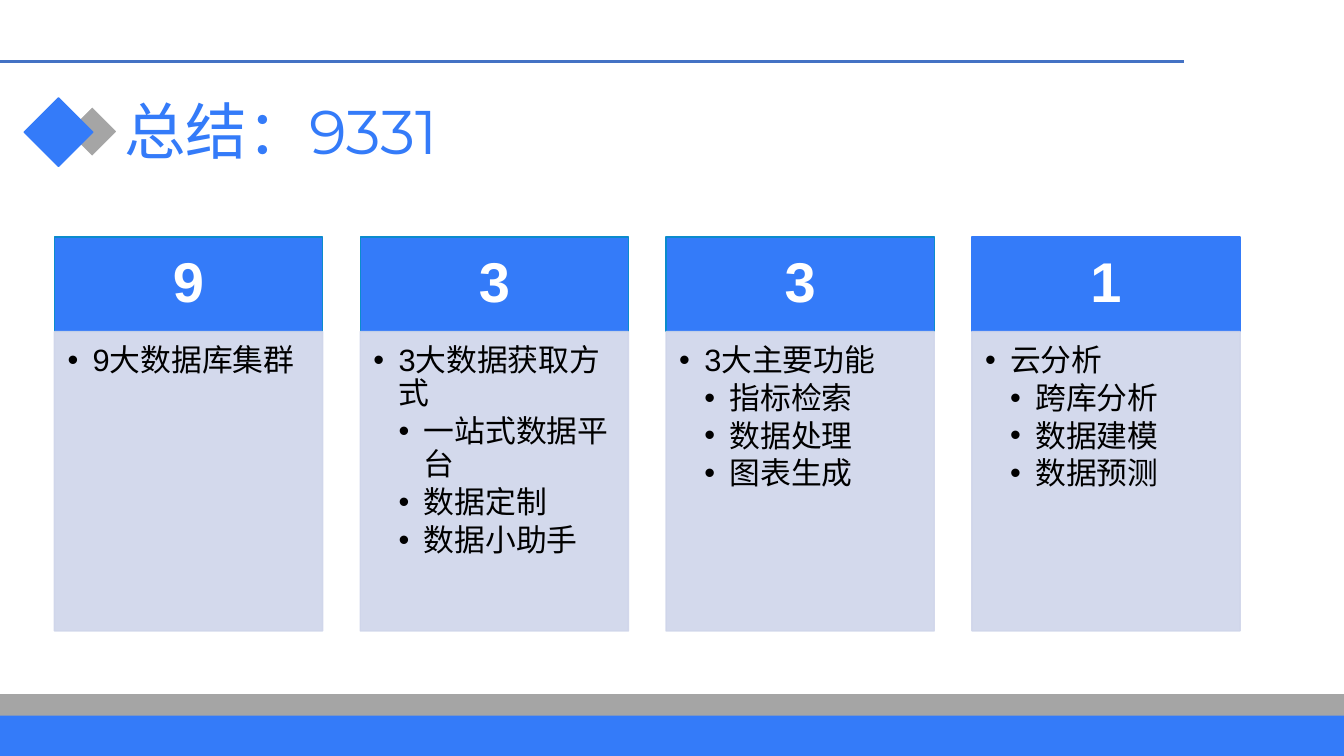
from dataclasses import dataclass

from lxml import etree
from pptx import Presentation
from pptx.dml.color import RGBColor
from pptx.enum.shapes import MSO_CONNECTOR, MSO_SHAPE
from pptx.enum.text import MSO_ANCHOR, MSO_AUTO_SIZE, PP_ALIGN
from pptx.oxml.ns import qn
from pptx.util import Inches, Pt

RECTANGLE, DIAMOND = MSO_SHAPE.RECTANGLE, MSO_SHAPE.DIAMOND
STRAIGHT = MSO_CONNECTOR.STRAIGHT
TOP, MIDDLE = MSO_ANCHOR.TOP, MSO_ANCHOR.MIDDLE
LEFT, CENTER = PP_ALIGN.LEFT, PP_ALIGN.CENTER
NO_AUTOFIT = MSO_AUTO_SIZE.NONE


@dataclass(frozen=True)
class Theme:
    blue: str = "347BF9"
    teal: str = "0B8BCC"
    rule: str = "4472C4"
    gray: str = "A5A5A5"
    panel: str = "CFD5EA"
    panel_opacity: int = 90
    white: str = "FFFFFF"
    black: str = "000000"
    title_font: str = "Montserrat"
    body_font: str = "Arial"
    title_size: int = 44
    number_size: int = 40
    list_size: int = 22
    line_spacing: float = 0.9
    list_space_after: float = 3.3


THEME = Theme()

# Content: number, outline colour of the header, main point, sub-points
TITLE = "总结：9331"
CARDS = [
    ("9", THEME.teal, "9大数据库集群", []),
    ("3", THEME.teal, "3大数据获取方式", ["一站式数据平台", "数据定制", "数据小助手"]),
    ("3", THEME.teal, "3大主要功能", ["指标检索", "数据处理", "图表生成"]),
    ("1", THEME.blue, "云分析", ["跨库分析", "数据建模", "数据预测"]),
]

# Layout in inches
SLIDE_WIDTH, SLIDE_HEIGHT = 13.33, 7.5
FIRST_CARD_LEFT, LAST_CARD_LEFT, CARD_WIDTH = 0.54, 9.64, 2.66
CARD_PITCH = (LAST_CARD_LEFT - FIRST_CARD_LEFT) / (len(CARDS) - 1)
HEADER_TOP, HEADER_HEIGHT, PANEL_HEIGHT = 2.35, 0.94, 2.97
HEADER_MARGINS = (0.31, 0.18, 0.31, 0.18)
PANEL_MARGINS = (0.13, 0.13, 0.17, 0.19)
BULLET_INDENT = 0.25


def color(value):
    return RGBColor.from_string(value)


def add_block(slide, kind, box, fill, line=None, line_width=1):
    shape = slide.shapes.add_shape(kind, *map(Inches, box))
    shape.shadow.inherit = False
    shape.fill.solid()
    shape.fill.fore_color.rgb = color(fill)
    if line:
        shape.line.color.rgb = color(line)
        shape.line.width = Pt(line_width)
    else:
        shape.line.fill.background()
    return shape


def set_opacity(shape, percent):
    for element in shape._element.spPr.iter(qn("a:srgbClr")):
        etree.SubElement(element, qn("a:alpha"), val=str(percent * 1000))


def set_frame(text_frame, margins, anchor):
    text_frame.word_wrap = True
    text_frame.vertical_anchor = anchor
    (text_frame.margin_left, text_frame.margin_top,
     text_frame.margin_right, text_frame.margin_bottom) = map(Inches, margins)


def format_paragraph(paragraph, alignment, font_name, size, font_color, bold=False):
    paragraph.alignment = alignment
    paragraph.line_spacing = THEME.line_spacing
    for run in paragraph.runs:
        run.font.name = font_name
        run.font.size = Pt(size)
        run.font.bold = bold
        run.font.color.rgb = color(font_color)


def add_bullet(paragraph, level):
    paragraph.level = level
    properties = paragraph._p.get_or_add_pPr()
    properties.set("marL", str(Inches(BULLET_INDENT * (level + 1))))
    properties.set("indent", str(-Inches(BULLET_INDENT)))
    etree.SubElement(properties, qn("a:buFont"), typeface=THEME.body_font)
    etree.SubElement(properties, qn("a:buChar"), char="•")


def add_frame_decoration(slide):
    # Footer bands
    add_block(slide, RECTANGLE, (0, 6.9, SLIDE_WIDTH, 0.6), THEME.gray, THEME.gray, 1.5)
    add_block(slide, RECTANGLE, (0, 7.1, SLIDE_WIDTH, 0.4), THEME.blue)
    # Top rule
    rule = slide.shapes.add_connector(
        STRAIGHT, Inches(0), Inches(0.61), Inches(11.74), Inches(0.61))
    rule.line.color.rgb = color(THEME.rule)
    rule.line.width = Pt(2.25)
    etree.SubElement(rule._element.spPr, qn("a:effectLst"))
    # Title marker
    add_block(slide, DIAMOND, (0.66, 1.05, 0.51, 0.51), THEME.gray, THEME.white, 1.5)
    add_block(slide, DIAMOND, (0.24, 0.97, 0.68, 0.68), THEME.blue, THEME.blue)


def add_title(slide):
    title = slide.shapes.title
    title.left, title.top, title.width, title.height = map(
        Inches, (1.13, 0.81, 11.28, 1.04))
    title.text_frame.text = TITLE
    title.text_frame.auto_size = NO_AUTOFIT
    set_frame(title.text_frame, (0.1, 0.05, 0.1, 0.05), MIDDLE)
    format_paragraph(title.text_frame.paragraphs[0], LEFT,
                     THEME.title_font, THEME.title_size, THEME.blue)


def add_card(slide, left, number, outline, main_point, sub_points):
    # Header with the number
    header = add_block(slide, RECTANGLE, (left, HEADER_TOP, CARD_WIDTH, HEADER_HEIGHT),
                       THEME.blue, outline)
    header.text_frame.text = number
    set_frame(header.text_frame, HEADER_MARGINS, MIDDLE)
    format_paragraph(header.text_frame.paragraphs[0], CENTER,
                     THEME.body_font, THEME.number_size, THEME.white, bold=True)

    # Panel with the bulleted list
    panel = add_block(
        slide, RECTANGLE,
        (left, HEADER_TOP + HEADER_HEIGHT, CARD_WIDTH, PANEL_HEIGHT),
        THEME.panel, THEME.panel)
    set_opacity(panel, THEME.panel_opacity)
    panel.text_frame.text = "\n".join([main_point, *sub_points])
    set_frame(panel.text_frame, PANEL_MARGINS, TOP)
    for index, paragraph in enumerate(panel.text_frame.paragraphs):
        add_bullet(paragraph, level=min(index, 1))
        format_paragraph(paragraph, LEFT, THEME.body_font, THEME.list_size, THEME.black)
        paragraph.space_after = Pt(THEME.list_space_after)


def main():
    presentation = Presentation()
    presentation.slide_width = Inches(SLIDE_WIDTH)
    presentation.slide_height = Inches(SLIDE_HEIGHT)
    title_only = presentation.slide_layouts.get_by_name("Title Only")
    slide = presentation.slides.add_slide(title_only)

    add_frame_decoration(slide)
    add_title(slide)
    for index, card in enumerate(CARDS):
        add_card(slide, FIRST_CARD_LEFT + index * CARD_PITCH, *card)

    presentation.save("out.pptx")


if __name__ == "__main__":
    main()
